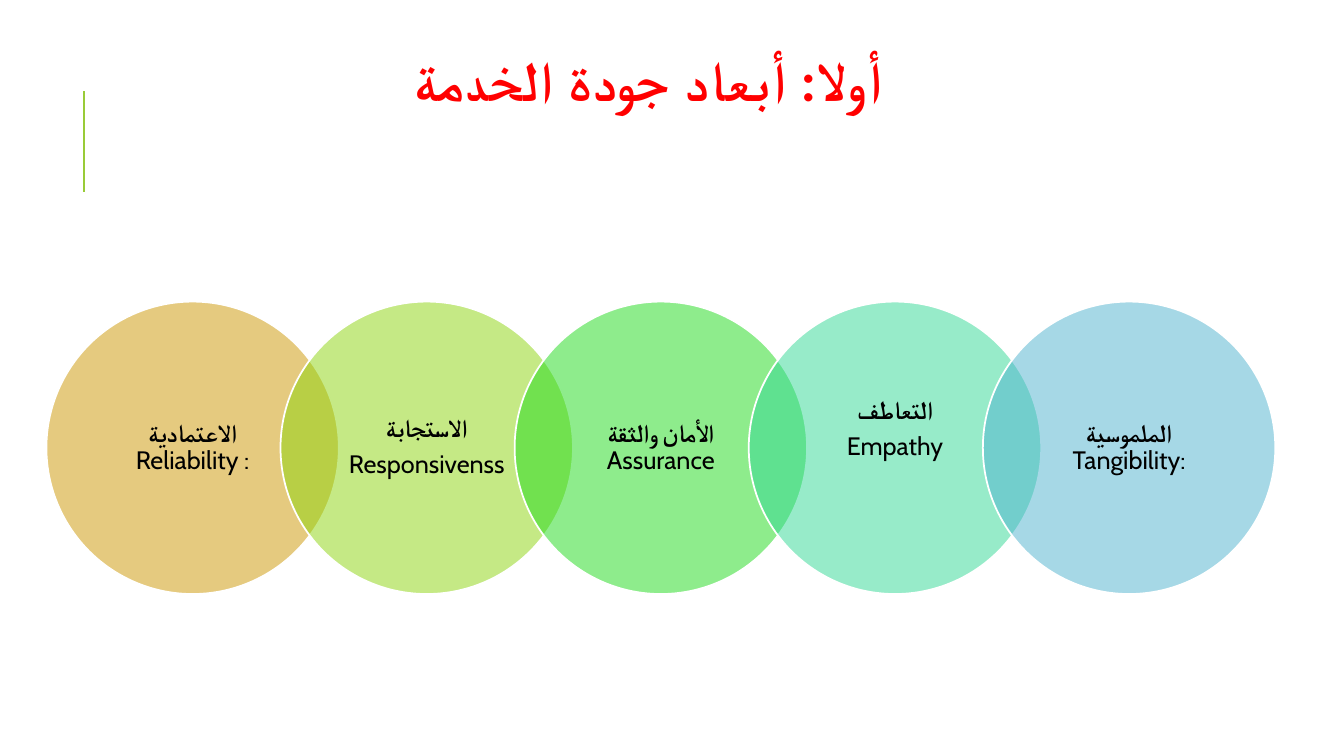
from lxml.etree import SubElement
from pptx import Presentation
from pptx.dml.color import RGBColor as Rgb
from pptx.enum.shapes import MSO_CONNECTOR as Connector, MSO_SHAPE as Shape
from pptx.enum.text import MSO_ANCHOR as Anchor, PP_ALIGN as Align
from pptx.oxml.ns import qn
from pptx.util import Cm, Pt

COLORS = {
    "background": "FFFFFF",
    "outline": "FFFFFF",
    "accent": "99CB38",
    "title": "FF0000",
    "label": "000000",
    "reliability": "CC9700",
    "responsiveness": "8CD40C",
    "assurance": "1EDA1A",
    "empathy": "31D895",
    "tangibility": "4EB3CF",
}

DIMENSIONS = [
    ("reliability", [[("الاعتمادية ", True), ("Reliability :", False)]], 0),
    ("responsiveness", [[("الاستجابة", True)], [("Responsivenss", False)]], 0),
    ("assurance", [[("الأمان والثقة ", True), ("Assurance", False)]], 0),
    ("empathy", [[("التعاطف", True)], [("Empathy", False)]], 0.91),
    ("tangibility", [[("الملموسية ", True), ("Tangibility:", False)]], 0),
]

CIRCLE_LEFT, CIRCLE_TOP, CIRCLE_SIZE, CIRCLE_STEP = 1.17, 7.6, 7.37, 5.9
LABEL_INSET = 1.08


def color(name):
    return Rgb.from_string(COLORS[name])


def write(frame, paragraphs, font, size, ink, spacing, after=0, rtl=False, tracking=None):
    for index, parts in enumerate(paragraphs):
        paragraph = frame.add_paragraph() if index else frame.paragraphs[0]
        paragraph.alignment = Align.CENTER
        paragraph.line_spacing = spacing
        paragraph.space_after = Pt(after)
        if rtl:
            paragraph._p.get_or_add_pPr().set("rtl", "1")
        for words, bold in parts:
            run = paragraph.add_run()
            run.text = words
            run.font.name = font
            run.font.size = Pt(size)
            run.font.bold = bold
            run.font.color.rgb = color(ink)
            properties = run._r.get_or_add_rPr()
            SubElement(properties, qn("a:cs"), typeface=font)
            if tracking:
                properties.set("spc", str(tracking))


class SlideBuilder:
    label_style = dict(font="Cabin", size=18, ink="label", spacing=0.9, after=6.3)
    title_style = dict(font="Calibri", size=40, ink="title", spacing=0.8, rtl=True, tracking=100)

    def __init__(self, slide):
        self.slide = slide
        slide.background.fill.solid()
        slide.background.fill.fore_color.rgb = color("background")

    def rule(self, x, start, end):
        accent = self.slide.shapes.add_connector(Connector.STRAIGHT, Cm(x), Cm(start), Cm(x), Cm(end))
        accent.line.color.rgb = color("accent")
        accent.line.width = Pt(1.5)
        SubElement(accent._element.spPr, qn("a:effectLst"))

    def circle(self, left, top, size, fill):
        circle = self.slide.shapes.add_shape(Shape.OVAL, Cm(left), Cm(top), Cm(size), Cm(size))
        circle.shadow.inherit = False
        circle.fill.solid()
        circle.fill.fore_color.rgb = color(fill)
        tint = circle._element.spPr.find(qn("a:solidFill"))[0]
        SubElement(tint, qn("a:alpha"), val="50000")
        circle.line.color.rgb = color("outline")
        circle.line.width = Pt(1.25)

    def text(self, left, top, width, height, paragraphs, style, margins=(0.25, 0.13), lift=0):
        frame = self.slide.shapes.add_textbox(Cm(left), Cm(top), Cm(width), Cm(height)).text_frame
        frame.word_wrap = True
        frame.vertical_anchor = Anchor.MIDDLE
        side, edge = margins
        frame.margin_left = frame.margin_right = Cm(side)
        frame.margin_top = Cm(edge)
        frame.margin_bottom = Cm(edge + lift)
        write(frame, paragraphs, **style)


def main():
    deck = Presentation()
    deck.slide_width, deck.slide_height = Cm(33.87), Cm(19.05)
    builder = SlideBuilder(deck.slides.add_slide(deck.slide_layouts[6]))

    builder.rule(2.12, 4.83, 2.29)
    label_size = CIRCLE_SIZE - 2 * LABEL_INSET
    for index, (name, label, lift) in enumerate(DIMENSIONS):
        left = CIRCLE_LEFT + index * CIRCLE_STEP
        builder.circle(left, CIRCLE_TOP, CIRCLE_SIZE, name)
        builder.text(left + LABEL_INSET, CIRCLE_TOP + LABEL_INSET, label_size, label_size,
                     label, builder.label_style, margins=(0.4, 0.08), lift=lift)
    builder.text(2.84, 0.99, 27, 2.31, [[("أولا: أبعاد جودة الخدمة", True)]], builder.title_style)

    deck.save("out.pptx")


if __name__ == "__main__":
    main()
